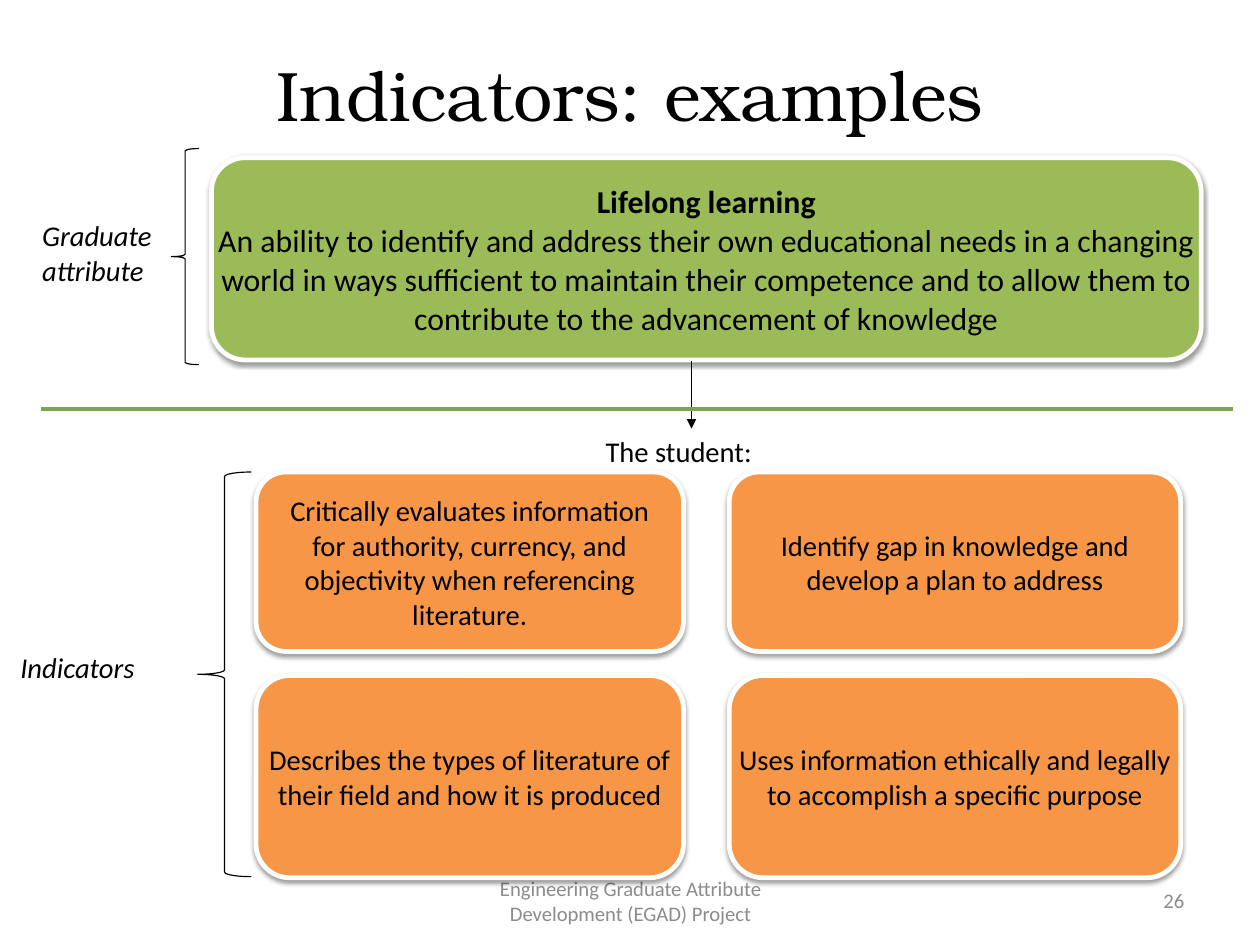
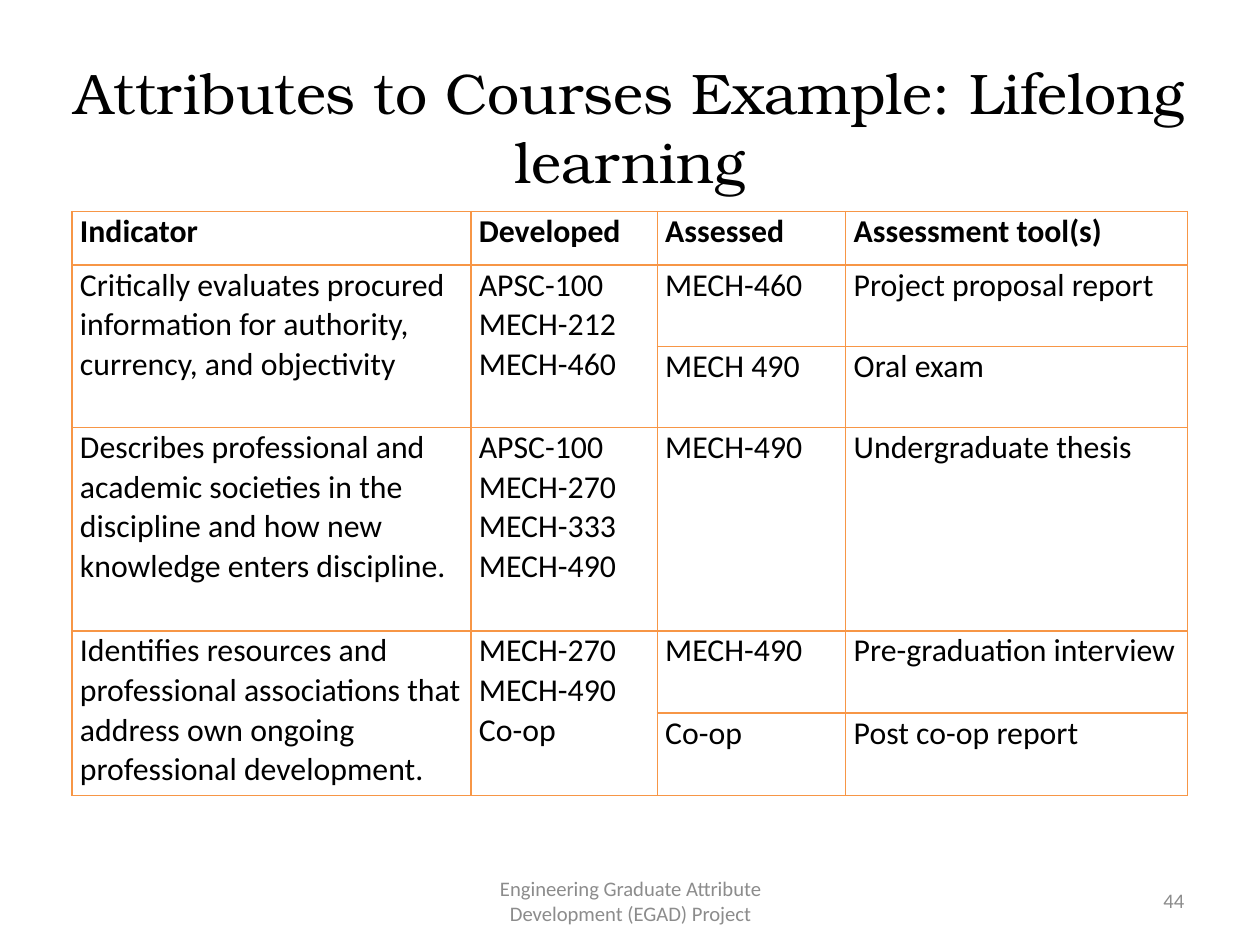
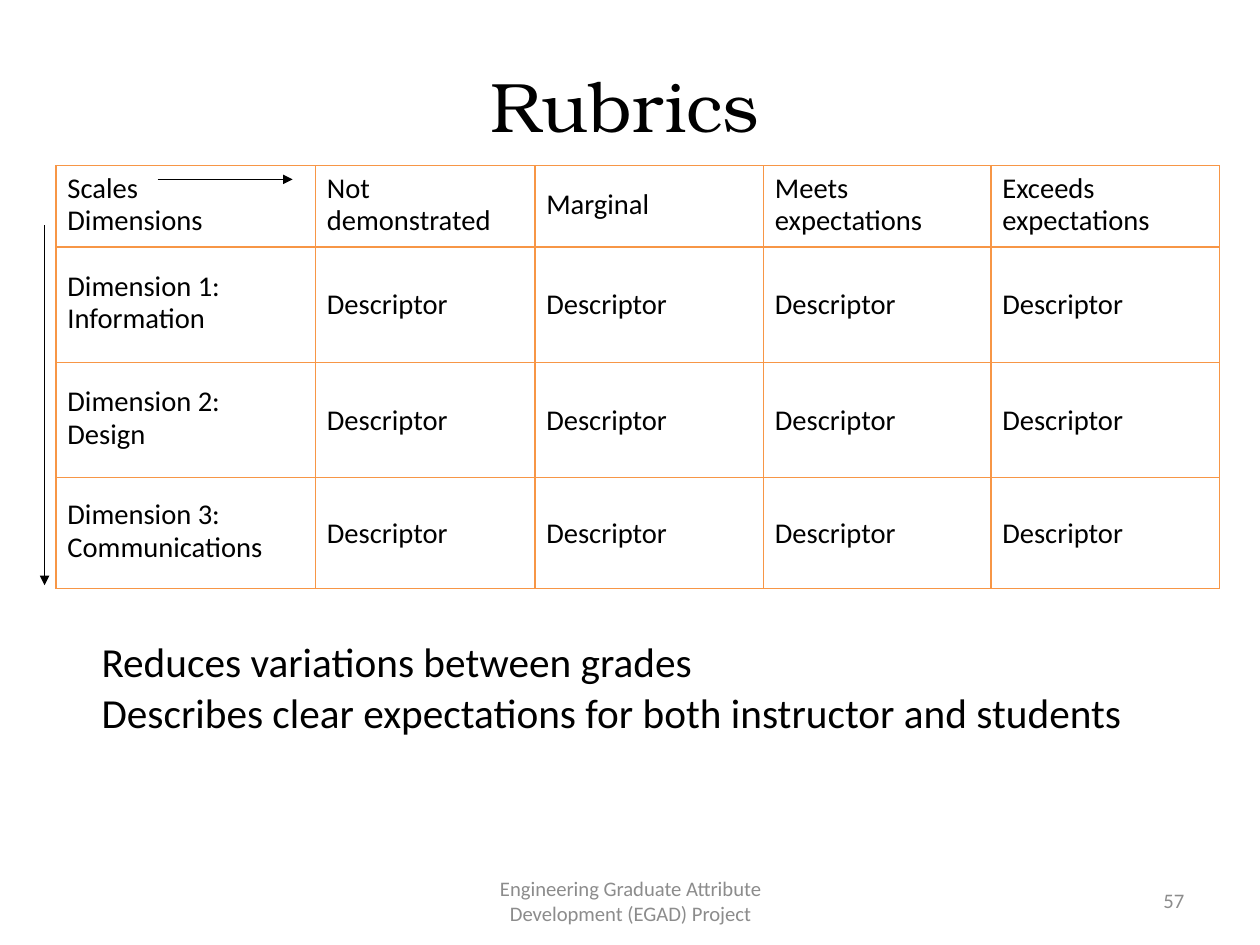
from lxml import etree
from pptx import Presentation
from pptx.dml.color import RGBColor
from pptx.enum.shapes import MSO_CONNECTOR, MSO_SHAPE
from pptx.enum.text import MSO_ANCHOR, PP_ALIGN
from pptx.oxml.ns import qn
from pptx.util import Cm, Inches, Pt

LEFT, CENTER, RIGHT = PP_ALIGN.LEFT, PP_ALIGN.CENTER, PP_ALIGN.RIGHT
TOP, MIDDLE = MSO_ANCHOR.TOP, MSO_ANCHOR.MIDDLE
STRAIGHT = MSO_CONNECTOR.STRAIGHT
ROUNDED, BRACE = MSO_SHAPE.ROUNDED_RECTANGLE, MSO_SHAPE.LEFT_BRACE

COLORS = {
    "ink": "000000",
    "paper": "FFFFFF",
    "footer": "8C8C8C",
    "attribute": "9BBB59",
    "indicator": "F79646",
    "divider": "7DA647",
}
TITLE_FONT, BODY_FONT = "TeX Gyre Bonum", "Calibri"
FOOTER = "Engineering Graduate Attribute Development (EGAD) Project"
PLACEHOLDER_MARGINS = (0.11, 0.06, 0.11, 0.06)
BOX_MARGINS = (0.1, 0.05, 0.1, 0.05)


def color(name):
    return RGBColor.from_string(COLORS[name])


def add_element(parent, tag, **attributes):
    return etree.SubElement(parent, qn(tag), attributes)


def write(holder, text, size=18, font=BODY_FONT, ink="ink", bold=False, bold_lead=False,
          italic=False, align=LEFT, spacing=1.02):
    for index, line in enumerate(text.split("\n")):
        paragraph = holder.paragraphs[0] if index == 0 else holder.add_paragraph()
        paragraph.alignment = align
        paragraph.line_spacing = spacing
        run = paragraph.add_run()
        run.text = line
        run.font.size = Pt(size)
        run.font.name = font
        run.font.bold = bold or (bold_lead and index == 0)
        run.font.italic = italic
        run.font.color.rgb = color(ink)


def set_margins(target, margins):
    left, top, right, bottom = map(Inches, margins)
    target.margin_left, target.margin_top = left, top
    target.margin_right, target.margin_bottom = right, bottom


class Deck:
    """Holds the shared style and the slide being drawn."""

    def __init__(self, presentation):
        self.presentation = presentation
        self.slide = None

    def new_slide(self, title, number, title_box, title_size=44.1):
        self.slide = self.presentation.slides.add_slide(self.presentation.slide_layouts[6])
        framed = {"anchor": MIDDLE, "margins": PLACEHOLDER_MARGINS, "spacing": 1.0}
        self.text(title, title_box, size=title_size, font=TITLE_FONT, align=CENTER, **framed)
        small = {"size": 13, "ink": "footer", **framed}
        self.text(FOOTER, (3.77, 7.66, 3.49, 0.44), align=CENTER, **small)
        self.text(str(number), (7.9, 7.66, 2.57, 0.44), align=RIGHT, **small)

    def text(self, text, box, anchor=TOP, margins=BOX_MARGINS, **style):
        frame = self.slide.shapes.add_textbox(*map(Inches, box)).text_frame
        frame.word_wrap = True
        frame.vertical_anchor = anchor
        set_margins(frame, margins)
        write(frame, text, **style)

    def card(self, text, box, fill, **style):
        shape = self.slide.shapes.add_shape(ROUNDED, *map(Inches, box))
        shape.fill.solid()
        shape.fill.fore_color.rgb = color(fill)
        shape.line.color.rgb = color("paper")
        shape.line.width = Pt(3)
        self.shadow(shape)
        frame = shape.text_frame
        frame.word_wrap = False
        frame.vertical_anchor = MIDDLE
        set_margins(frame, BOX_MARGINS)
        write(frame, text, align=CENTER, **style)

    def shadow(self, shape):
        shape.shadow.inherit = False
        effects = shape._element.spPr.find(qn("a:effectLst"))
        outer = add_element(effects, "a:outerShdw", blurRad=str(Pt(3.1)), dist=str(Pt(1.6)),
                            dir="5400000", rotWithShape="0")
        tint = add_element(outer, "a:srgbClr", val=COLORS["ink"])
        add_element(tint, "a:alpha", val="38000")

    def brace(self, box):
        shape = self.slide.shapes.add_shape(BRACE, *map(Inches, box))
        shape.shadow.inherit = False
        shape.fill.background()
        shape.line.color.rgb = color("ink")
        shape.line.width = Pt(0.75)

    def line(self, start, end, ink="ink", width=0.75, arrow=True):
        connector = self.slide.shapes.add_connector(STRAIGHT, *map(Inches, start + end))
        connector.line.color.rgb = color(ink)
        connector.line.width = Pt(width)
        if arrow:
            outline = connector._element.spPr.find(qn("a:ln"))
            add_element(outline, "a:tailEnd", type="triangle")
        add_element(connector._element.spPr, "a:effectLst")

    def table(self, corner, widths, heights, rows, cell_style):
        size = (sum(widths), sum(heights))
        table = self.slide.shapes.add_table(len(heights), len(widths),
                                            *map(Inches, corner + size)).table
        table.first_row = table.horz_banding = False
        for column, width in zip(table.columns, widths):
            column.width = Inches(width)
        for row, height in zip(table.rows, heights):
            row.height = Inches(height)
        for row_index, row in enumerate(rows):
            for column_index, text in enumerate(row):
                cell = table.cell(row_index, column_index)
                cell.fill.background()
                self.borders(cell)
                if text is None:
                    table.cell(row_index - 1, column_index).merge(cell)
                    continue
                style = cell_style(row_index, column_index)
                set_margins(cell, style.pop("margins"))
                cell.vertical_anchor = style.pop("anchor")
                write(cell.text_frame, text, **style)

    def borders(self, cell):
        properties = cell._tc.get_or_add_tcPr()
        for index, side in enumerate(("a:lnL", "a:lnR", "a:lnT", "a:lnB")):
            edge = add_element(properties, side, w=str(Pt(1)))
            add_element(add_element(edge, "a:solidFill"), "a:srgbClr", val=COLORS["indicator"])
            properties.insert(index, edge)


def indicators_slide(deck):
    deck.new_slide("Indicators: examples", 26, (0.55, 0.49, 9.92, 0.65))
    deck.card("Lifelong learning\n"
              "An ability to identify and address their own educational needs in a changing\n"
              "world in ways sufficient to maintain their competence and to allow them to\n"
              "contribute to the advancement of knowledge",
              (1.85, 1.38, 8.66, 1.77), "attribute", size=20, bold_lead=True)
    indicators = (
        ("Critically evaluates information\nfor authority, currency, and\n"
         "objectivity when referencing\nliterature.",
         "Identify gap in knowledge and\ndevelop a plan to address"),
        ("Describes the types of literature of\ntheir field and how it is produced",
         "Uses information ethically and legally\nto accomplish a specific purpose"),
    )
    for (top, height), row in zip(((4.13, 1.57), (5.91, 1.77)), indicators):
        for (left, width), text in zip(((2.24, 3.74), (6.38, 3.95)), row):
            deck.card(text, (left, top, width, height), "indicator")
    deck.line((6.05, 3.16), (6.05, 3.75))
    deck.line((0.36, 3.58), (10.79, 3.58), ink="divider", width=2.83, arrow=False)
    deck.text("The student:", (5.2, 3.74, 1.57, 0.4))
    deck.text("Graduate\nattribute", (0.27, 1.85, 1.18, 0.71), italic=True)
    deck.text("Indicators", (0.08, 5.63, 1.57, 0.71), italic=True)
    deck.brace((1.5, 1.3, 0.24, 1.89))
    deck.brace((1.73, 4.13, 0.47, 3.54))


def courses_slide(deck):
    def course_style(row, column):
        return {"margins": (0.07, 0, 0.07, 0), "anchor": TOP, "size": 20, "bold": row == 0}

    deck.new_slide("Attributes to Courses Example: Lifelong learning", 44,
                   (0, 0.67, 11.02, 0.87), title_size=36)
    rows = (
        ("Indicator", "Developed", "Assessed", "Assessment tool(s)"),
        ("Critically evaluates procured information for authority, currency, and objectivity",
         "APSC-100\nMECH-212\nMECH-460", "MECH-460", "Project proposal report"),
        (None, None, "MECH 490", "Oral exam"),
        ("Describes professional and academic societies in the discipline and how new "
         "knowledge enters discipline.",
         "APSC-100\nMECH-270\nMECH-333\nMECH-490", "MECH-490", "Undergraduate thesis"),
        ("Identifies resources and professional associations that address own ongoing "
         "professional development.",
         "MECH-270\nMECH-490\nCo-op", "MECH-490", "Pre-graduation interview"),
        (None, None, "Co-op", "Post co-op report"),
    )
    deck.table((0.63, 1.85), (3.49, 1.63, 1.65, 2.99), (0.47, 0.71, 0.71, 1.78, 0.72, 0.72),
               rows, course_style)


def rubrics_slide(deck):
    def rubric_style(row, column):
        if row == 0 or column == 0:
            return {"margins": (0.1, 0.02, 0.1, 0.05), "anchor": MIDDLE, "spacing": 0.93}
        return {"margins": BOX_MARGINS, "anchor": MIDDLE}

    deck.new_slide("Rubrics", 57, (0.51, 0.59, 9.92, 0.65))
    scales = ("Not demonstrated", "Marginal", "Meets expectations", "Exceeds expectations")
    dimensions = ("Information", "Design", "Communications")
    rows = [("Scales\nDimensions",) + scales]
    for number, dimension in enumerate(dimensions, 1):
        rows.append((f"Dimension {number}:\n{dimension}",) + ("Descriptor",) * len(scales))
    deck.table((0.49, 1.45), (2.27, 1.92, 2, 1.99, 2), (0.71, 1.01, 1.01, 0.97),
               rows, rubric_style)
    deck.line((1.38, 1.57), (2.56, 1.57))
    deck.line((0.39, 1.97), (0.39, 5.12))
    deck.text("Reduces variations between grades\n"
              "Describes clear expectations for both instructor and students",
              (0.79, 5.51, 9.65, 0.98), size=26)


def main():
    presentation = Presentation()
    presentation.slide_width = Cm(28)
    presentation.slide_height = Cm(21)
    deck = Deck(presentation)
    indicators_slide(deck)
    courses_slide(deck)
    rubrics_slide(deck)
    presentation.save("out.pptx")


if __name__ == "__main__":
    main()
